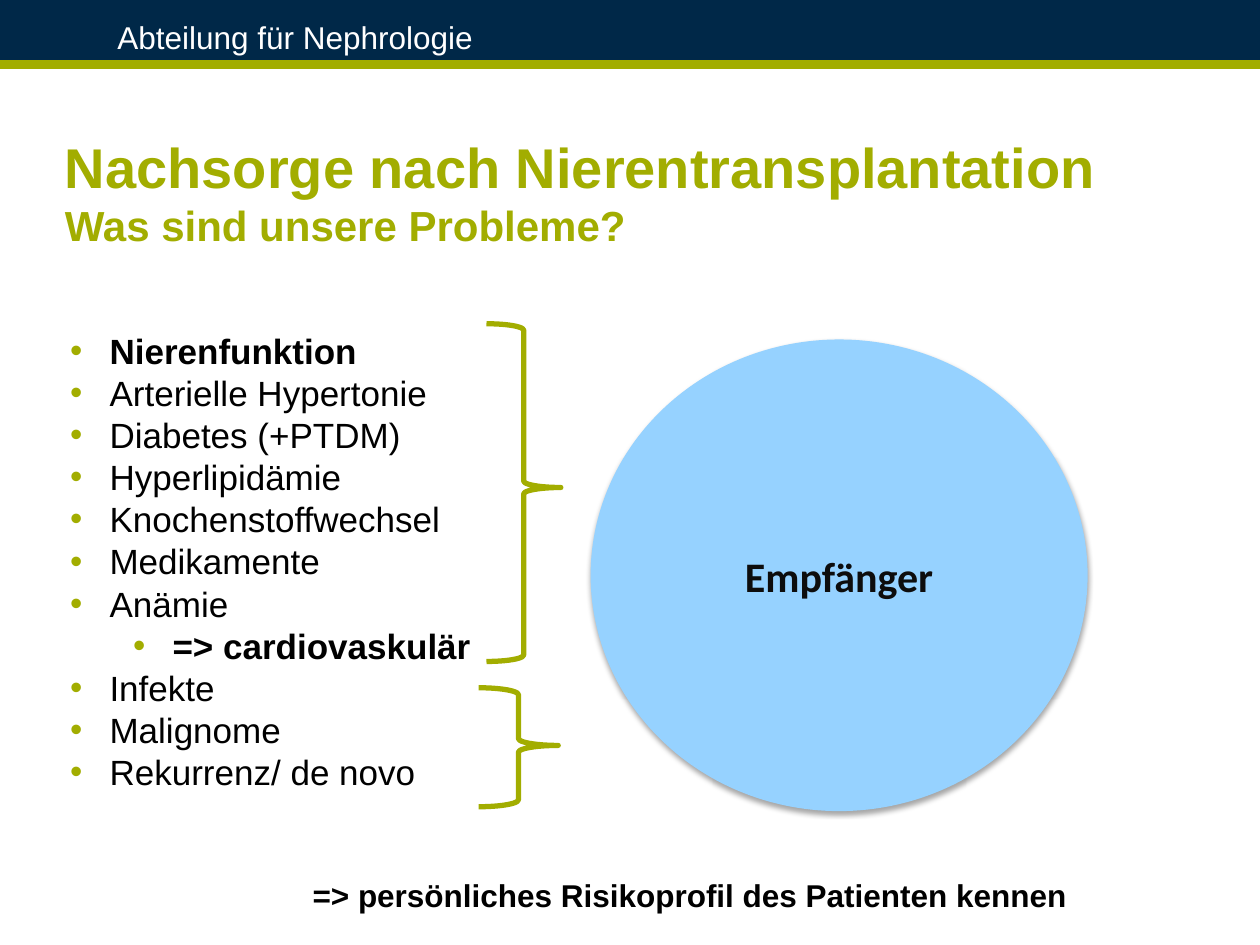
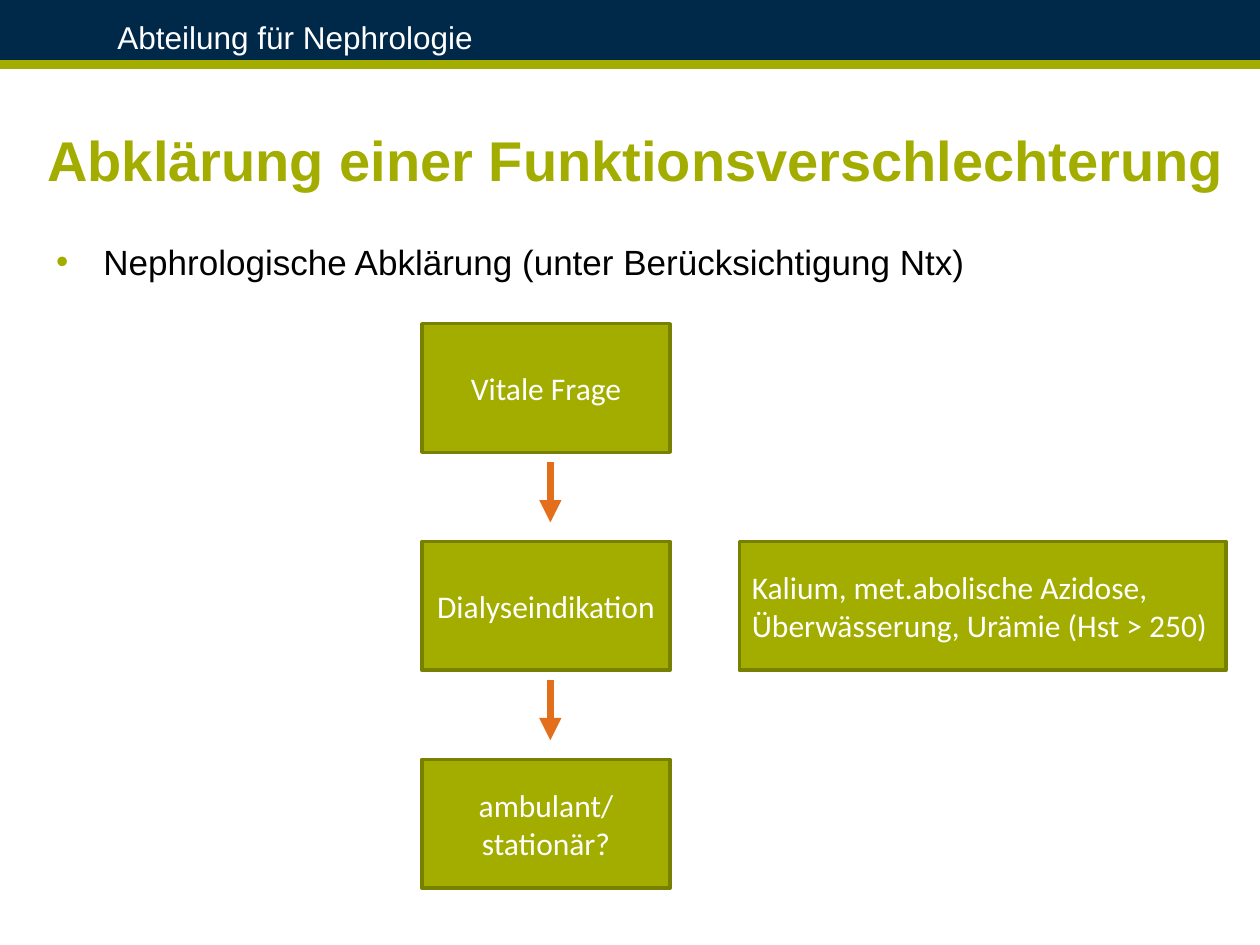
from dataclasses import dataclass

from lxml import etree
from pptx import Presentation
from pptx import util as u
from pptx.dml.color import RGBColor
from pptx.enum import shapes, text
from pptx.oxml import ns


@dataclass(frozen=True)
class Theme:
    navy: str = "002848"
    green: str = "A2AD00"
    dark_green: str = "788000"
    sky: str = "96D2FF"
    orange: str = "E36F1D"
    white: str = "FFFFFF"
    black: str = "000000"
    ink: str = "0D0D0D"
    sans: str = "Arial"
    label: str = "Calibri"
    title: int = 32
    subtitle: int = 24
    body: int = 20
    small: int = 18
    bullet_line: int = 24


THEME = Theme()
PAGE_WIDTH, PAGE_HEIGHT = 720, 540


def points(*values):
    return [u.Pt(value) for value in values]


def rgb(code):
    return RGBColor.from_string(code)


def add_xml(parent, tag, **attributes):
    return etree.SubElement(parent, ns.qn(tag), attributes)


def style(para, size, color, bold=False, font=THEME.sans):
    para.font.name = font
    para.font.size = u.Pt(size)
    para.font.bold = bold
    para.font.color.rgb = rgb(color)


def add_shape(page, kind, box, fill=None, line=None, width=1):
    shape = page.shapes.add_shape(kind, *points(*box))
    shape.shadow.inherit = False
    if fill:
        shape.fill.solid()
        shape.fill.fore_color.rgb = rgb(fill)
    else:
        shape.fill.background()
    if line:
        shape.line.color.rgb = rgb(line)
        shape.line.width = u.Pt(width)
    else:
        shape.line.fill.background()
    return shape


def add_line(page, start, end, color, width, arrow=False):
    line = page.shapes.add_connector(
        shapes.MSO_CONNECTOR.STRAIGHT, *points(*start, *end))
    line.line.color.rgb = rgb(color)
    line.line.width = u.Pt(width)
    properties = line._element.spPr
    if arrow:
        add_xml(properties.find(ns.qn("a:ln")), "a:tailEnd", type="triangle")
    add_xml(properties, "a:effectLst")


def add_text(page, box, lines, wrap=False):
    """Each line is (wording, size, color, bold)."""
    frame = page.shapes.add_textbox(*points(*box)).text_frame
    frame.word_wrap = wrap
    for index, (wording, *look) in enumerate(lines):
        para = frame.add_paragraph() if index else frame.paragraphs[0]
        para.text = wording
        style(para, *look)


def add_label(shape, wording, size, color, bold=False,
              align=text.PP_ALIGN.CENTER):
    frame = shape.text_frame
    frame.word_wrap = True
    frame.vertical_anchor = text.MSO_ANCHOR.MIDDLE
    para = frame.paragraphs[0]
    para.text = wording
    para.alignment = align
    style(para, size, color, bold, THEME.label)


def add_bullets(page, box, items, hang):
    """Each item is (wording, level, bold)."""
    frame = page.shapes.add_textbox(*points(*box)).text_frame
    frame.word_wrap = True
    for index, (wording, level, bold) in enumerate(items):
        para = frame.add_paragraph() if index else frame.paragraphs[0]
        para.text = wording
        para.level = level
        properties = para._p.get_or_add_pPr()
        properties.set("marL", str(u.Pt(hang + 36 * level)))
        properties.set("indent", str(-u.Pt(hang)))
        add_xml(add_xml(properties, "a:buClr"), "a:srgbClr", val=THEME.green)
        add_xml(properties, "a:buFont", typeface=THEME.sans)
        add_xml(properties, "a:buChar", char="•")
        para.line_spacing = u.Pt(THEME.bullet_line)
        style(para, THEME.body, THEME.black, bold)


def add_soft_shadow(shape):
    effects = shape._element.spPr.find(ns.qn("a:effectLst"))
    shadow = add_xml(effects, "a:outerShdw", blurRad=str(u.Pt(3.1)),
                     dist=str(u.Pt(1.8)), dir="5400000", rotWithShape="0")
    color = add_xml(shadow, "a:srgbClr", val=THEME.black)
    add_xml(color, "a:alpha", val="35000")


def new_page(deck):
    """Blank page with the department band on top."""
    page = deck.slides.add_slide(deck.slide_layouts[6])
    rectangle = shapes.MSO_SHAPE.RECTANGLE
    add_shape(page, rectangle, (0, 0, PAGE_WIDTH, PAGE_HEIGHT),
              THEME.navy, THEME.navy, 0.75)
    add_line(page, (0, 37.5), (PAGE_WIDTH, 37.5), THEME.green, 6)
    add_shape(page, rectangle, (0, 39.5, PAGE_WIDTH, PAGE_HEIGHT - 39.5),
              THEME.white)
    add_text(page, (60, 6.5, 474, 28),
             [("Abteilung für Nephrologie", THEME.small, THEME.white)])
    return page


def draw_problem_list(page, box):
    """Bulleted problems, with braces that gather them on the right."""
    left, top, width, height = box
    add_bullets(page, box, [
        ("Nierenfunktion", 0, True),
        ("Arterielle Hypertonie", 0, False),
        ("Diabetes (+PTDM)", 0, False),
        ("Hyperlipidämie", 0, False),
        ("Knochenstoffwechsel", 0, False),
        ("Medikamente", 0, False),
        ("Anämie", 0, False),
        ("=> cardiovaskulär", 1, True),
        ("Infekte", 0, False),
        ("Malignome", 0, False),
        ("Rekurrenz/ de novo", 0, False),
    ], hang=22.5)
    right = left + width
    for brace_box in ((right, top, 42.5, 193),
                      (right - 4.5, top + 208, 45.5, 68)):
        brace = add_shape(page, shapes.MSO_SHAPE.RIGHT_BRACE, brace_box,
                          line=THEME.green, width=3)
        brace.adjustments[0] = 0.087
        brace.adjustments[1] = 0.485


def draw_recipient(page, box):
    circle = add_shape(page, shapes.MSO_SHAPE.OVAL, box, THEME.sky)
    add_soft_shadow(circle)
    add_label(circle, "Empfänger", THEME.subtitle, THEME.ink, True)


def draw_decision_steps(page, box, gap):
    """Column of steps joined by arrows; box is the first step."""
    left, top, width, height = box
    pitch = height + gap
    steps = ("Vitale Frage", "Dialyseindikation", "ambulant/ stationär?")
    for index, wording in enumerate(steps):
        step_top = top + index * pitch
        draw_step(page, (left, step_top, width, height), wording)
        if index:
            middle = left + width / 2 + 2.5
            add_line(page, (middle, step_top - gap + 5.5),
                     (middle, step_top - 11), THEME.orange, 4.25, arrow=True)
    # Criteria beside the second step
    draw_step(page, (left + width + 39.5, top + pitch, 278, height),
              "Kalium, met.abolische Azidose, Überwässerung, "
              "Urämie (Hst > 250)", text.PP_ALIGN.LEFT)


def draw_step(page, box, wording, align=text.PP_ALIGN.CENTER):
    step = add_shape(page, shapes.MSO_SHAPE.RECTANGLE, box,
                     THEME.green, THEME.dark_green, 2)
    add_label(step, wording, THEME.small, THEME.white, align=align)


def build_problems(deck):
    page = new_page(deck)
    add_text(page, (30, 72, 660, 72), [
        ("Nachsorge nach Nierentransplantation",
         THEME.title, THEME.green, True),
        ("Was sind unsere Probleme?", THEME.subtitle, THEME.green, True),
    ])
    draw_recipient(page, (337.5, 194, 284, 269.5))
    draw_problem_list(page, (33, 185, 245, 274))
    add_text(page, (171.5, 497, 450, 29), [
        ("=> persönliches Risikoprofil des Patienten kennen",
         THEME.small, THEME.black, True)])


def build_workup(deck):
    page = new_page(deck)
    add_text(page, (20, 68, 692, 46), [
        ("Abklärung einer Funktionsverschlechterung",
         THEME.title, THEME.green, True)])
    add_bullets(page, (25, 134, 680, 32), [
        ("Nephrologische Abklärung (unter Berücksichtigung Ntx)", 0, False),
    ], hang=27)
    draw_decision_steps(page, (241, 185, 142, 73.5), gap=51)


def main():
    deck = Presentation()
    deck.slide_width, deck.slide_height = points(PAGE_WIDTH, PAGE_HEIGHT)
    build_problems(deck)
    build_workup(deck)
    deck.save("out.pptx")


if __name__ == "__main__":
    main()
